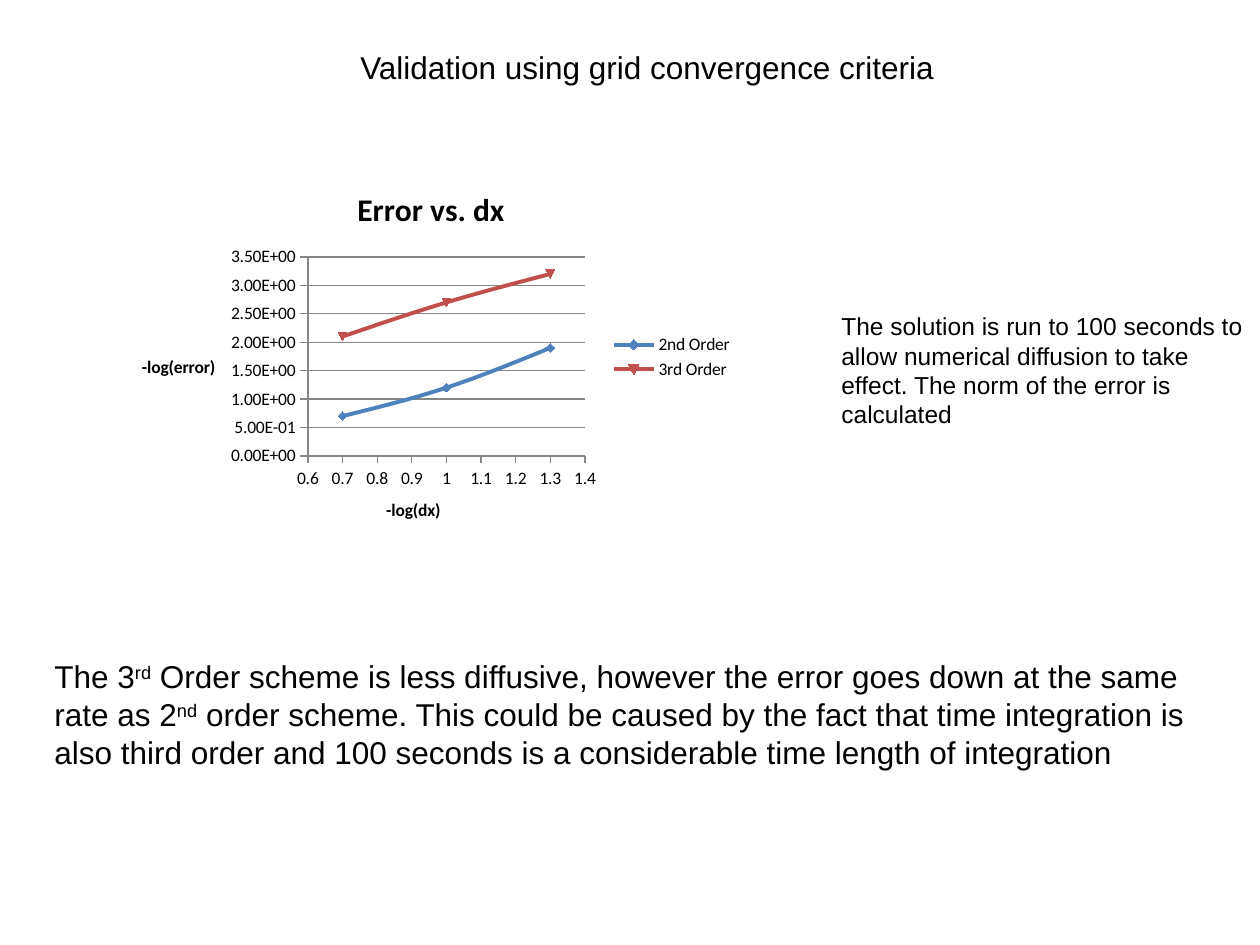
from lxml import etree
from pptx import Presentation, util as u
from pptx.chart.data import XyChartData
from pptx.dml.color import RGBColor
from pptx.enum import chart as c, text as t
from pptx.oxml.ns import qn

PX = 914400 / 126
BLACK, GREY = "000000", "868686"

# box (left, top, width, height), size, alignment, runs of (text, is superscript)
TEXTS = [
    ((95, 42, 1113, 50), 18, t.PP_ALIGN.CENTER,
     [("Validation using grid convergence criteria ", False)]),
    ((42, 651, 1176, 127), 18, t.PP_ALIGN.LEFT,
     [("The 3", False), ("rd", True),
      (" Order scheme is less diffusive, however the error goes down at the same rate as 2", False),
      ("nd", True),
      (" order scheme. This could be caused by the fact that time integration is also third order "
       "and 100 seconds is a considerable time length of integration", False)]),
    ((829, 305, 431, 131), 14, t.PP_ALIGN.LEFT,
     [("The solution is run to 100 seconds to allow numerical diffusion to take effect. "
       "The norm of the error is calculated", False)]),
]

CHART_BOX = (116, 168, 630, 378)
PLOT_BOX = (308, 257, 277, 199)
LOG_DX = (0.7, 1, 1.3)
SERIES = [
    ("2nd Order", (0.7, 1.2, 1.9), "4F81BD"),
    ("3rd Order", (2.1, 2.7, 3.2), "C0504D"),
]
# title, minimum, maximum, major unit, number format
X_AXIS = ("-log(dx)", 0.6, 1.4, 0.1, "General")
Y_AXIS = ("-log(error)", 0, 3.5, 0.5, "0.00E+00")


def color(value):
    return RGBColor.from_string(value)


def emu(box):
    return [u.Emu(round(length * PX)) for length in box]


def style_font(font, name, size, bold=False):
    font.name, font.size, font.bold = name, u.Pt(size), bold
    font.color.rgb = color(BLACK)


def add_text(slide, box, size, alignment, runs):
    frame = slide.shapes.add_textbox(*emu(box)).text_frame
    frame.word_wrap = True
    paragraph = frame.paragraphs[0]
    paragraph.alignment = alignment
    style_font(paragraph.font, "Arial", size)
    for words, superscript in runs:
        run = paragraph.add_run()
        run.text = words
        style_font(run.font, "Arial", size)
        if superscript:
            run._r.get_or_add_rPr().set("baseline", "30000")


def set_title(owner, words, size):
    owner.text_frame.text = words
    style_font(owner.text_frame.paragraphs[0].runs[0].font, "Calibri", size, True)


def style_axis(axis, title, minimum, maximum, unit, number_format):
    set_title(axis.axis_title, title, 10)
    axis.minimum_scale, axis.maximum_scale, axis.major_unit = minimum, maximum, unit
    axis.major_tick_mark = c.XL_TICK_MARK.OUTSIDE
    axis.tick_labels.number_format = number_format
    axis.tick_labels.number_format_is_linked = False
    axis.format.line.color.rgb = color(GREY)


def style_series(series, number, hue):
    """Draw a smooth line; the series number selects its automatic marker."""
    series.format.line.color.rgb = color(hue)
    series.format.line.width = u.Pt(2.25)
    element = series._element
    for tag, value in (("idx", number), ("order", number), ("smooth", 1)):
        element.find(qn("c:" + tag)).set("val", str(value))
    for marker in element.findall(qn("c:marker")):
        element.remove(marker)


def place_plot(chart):
    """Fix the inner plot area as fractions of the chart."""
    plot_area = chart._chartSpace.chart.plotArea
    for old in plot_area.findall(qn("c:layout")):
        plot_area.remove(old)
    layout = etree.Element(qn("c:layout"))
    manual = etree.SubElement(layout, qn("c:manualLayout"))
    left, top, width, height = CHART_BOX
    x, y, w, h = PLOT_BOX
    for tag, value in (("layoutTarget", "inner"), ("xMode", "edge"), ("yMode", "edge"),
                       ("x", (x - left) / width), ("y", (y - top) / height),
                       ("w", w / width), ("h", h / height)):
        etree.SubElement(manual, qn("c:" + tag)).set("val", str(value))
    plot_area.insert(0, layout)


def add_error_chart(slide):
    data = XyChartData()
    for name, values, _ in SERIES:
        series = data.add_series(name)
        for x, y in zip(LOG_DX, values):
            series.add_data_point(x, y)
    chart = slide.shapes.add_chart(c.XL_CHART_TYPE.XY_SCATTER_SMOOTH, *emu(CHART_BOX), data).chart
    style_font(chart.font, "Calibri", 10)
    set_title(chart.chart_title, "Error vs. dx", 18)
    chart.has_legend = True
    chart.legend.position = c.XL_LEGEND_POSITION.RIGHT
    chart.legend.include_in_layout = False
    chart.plots[0].vary_by_categories = False
    for number, (series, (_, _, hue)) in enumerate(zip(list(chart.plots[0].series), SERIES), 1):
        style_series(series, number, hue)
    style_axis(chart.category_axis, *X_AXIS)
    style_axis(chart.value_axis, *Y_AXIS)
    chart.category_axis.has_major_gridlines = False
    chart.value_axis.has_major_gridlines = True
    chart.value_axis.major_gridlines.format.line.color.rgb = color(GREY)
    body = chart.value_axis.axis_title.text_frame._txBody.find(qn("a:bodyPr"))
    body.set("rot", "0")
    body.set("vert", "horz")
    place_plot(chart)


presentation = Presentation()
presentation.slide_width, presentation.slide_height = emu((1260, 945))
slide = presentation.slides.add_slide(presentation.slide_layouts[6])
for item in TEXTS:
    add_text(slide, *item)
add_error_chart(slide)
presentation.save("out.pptx")
